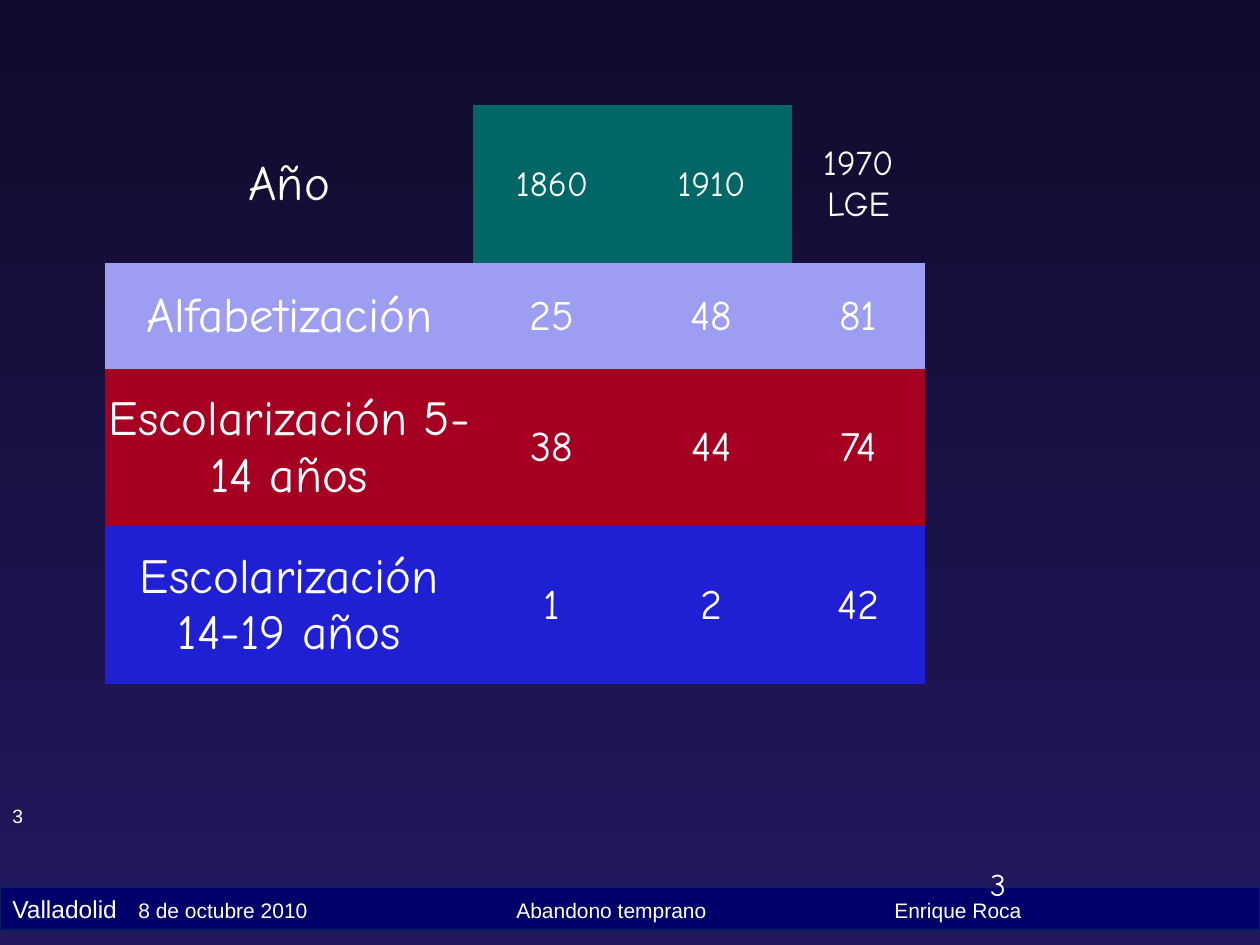
from lxml import etree
from pptx import Presentation
from pptx.dml.color import RGBColor
from pptx.enum.shapes import MSO_SHAPE
from pptx.enum.text import MSO_ANCHOR, PP_ALIGN
from pptx.oxml.ns import qn
from pptx.util import Cm, Pt

RECT = MSO_SHAPE.RECTANGLE
MIDDLE = MSO_ANCHOR.MIDDLE
LEFT, CENTER = PP_ALIGN.LEFT, PP_ALIGN.CENTER

WHITE = RGBColor(0xFF, 0xFF, 0xFF)
NIGHT = RGBColor(0x10, 0x0B, 0x2C)
VIOLET = RGBColor(0x22, 0x18, 0x5E)
NAVY = RGBColor(0x00, 0x00, 0x6B)
EDGE = RGBColor(0x00, 0x20, 0x60)
TEAL = RGBColor(0x00, 0x66, 0x66)
LILAC = RGBColor(0x9D, 0x9D, 0xF1)
RED = RGBColor(0xA5, 0x00, 0x21)
BLUE = RGBColor(0x1F, 0x1F, 0xD3)

SANS, COMIC = "Arial", "Comic Neue"
PLAIN = "{2D5ABB26-0587-4C30-8999-92F81FD0307C}"
COLS = (7.42, 3.18, 3.25, 2.67)
ROWS = (
    (3.18, 20, (None, TEAL, TEAL, None), ("Año", "1860", "1910", "1970\nLGE")),
    (2.14, 24, (LILAC,) * 4, ("Alfabetización", "25", "48", "81")),
    (3.16, 24, (RED,) * 4, ("Escolarización 5-14 años", "38", "44", "74")),
    (3.18, 24, (BLUE,) * 4, ("Escolarización\n14-19 años", "1", "2", "42")),
)


def style(run, size, face):
    """Give a run its size, typeface and white colour."""
    run.font.size = Pt(size)
    run.font.name = face
    run.font.color.rgb = WHITE


def paint(slide):
    """Fill the background with a vertical gradient."""
    fill = slide.background.fill
    fill.gradient()
    fill.gradient_angle = 270
    for stop, color in zip(fill.gradient_stops, (NIGHT, VIOLET)):
        stop.color.rgb = color


def add_number(slide, box, size, face):
    """Place the page number in a text box."""
    frame = slide.shapes.add_textbox(*map(Cm, box)).text_frame
    frame.word_wrap = True
    frame.text = "3"
    style(frame.paragraphs[0].runs[0], size, face)


def add_footer(slide, box):
    """Draw the footer band with its four tabbed entries."""
    band = slide.shapes.add_shape(RECT, *map(Cm, box))
    band.shadow.inherit = False
    band.fill.solid()
    band.fill.fore_color.rgb = NAVY
    band.line.color.rgb = EDGE
    band.line.width = Pt(0.75)
    band.text_frame.vertical_anchor = MIDDLE
    para = band.text_frame.paragraphs[0]
    para.alignment = LEFT
    tabs = etree.SubElement(para._p.get_or_add_pPr(), qn("a:tabLst"))
    for pos in (2.54, 10.16, 17.78):
        etree.SubElement(tabs, qn("a:tab"), pos=str(Cm(pos)), algn="l")
    parts = (
        ("Valladolid\t", 14),
        ("8 de octubre 2010\tAbandono temprano\tEnrique Roca", 12),
    )
    for text, size in parts:
        run = para.add_run()
        run.text = text
        style(run, size, SANS)


def fill_cell(cell, text, size, color):
    """Write one table cell and colour it."""
    cell.margin_left = cell.margin_right = cell.margin_top = Cm(0.03)
    cell.margin_bottom = 0
    cell.vertical_anchor = MIDDLE
    if color is None:
        cell.fill.background()
    else:
        cell.fill.solid()
        cell.fill.fore_color.rgb = color
    cell.text_frame.text = text
    for para in cell.text_frame.paragraphs:
        para.alignment = CENTER
        style(para.runs[0], size, COMIC)


def add_grid(slide, left, top):
    """Build the schooling table from its top left corner."""
    width, height = sum(COLS), sum(row[0] for row in ROWS)
    box = map(Cm, (left, top, width, height))
    table = slide.shapes.add_table(len(ROWS), len(COLS), *box).table
    table.first_row = table.horz_banding = False
    table._tbl.tblPr.find(qn("a:tableStyleId")).text = PLAIN
    for col, wide in zip(table.columns, COLS):
        col.width = Cm(wide)
    for row, (high, size, colors, texts) in zip(table.rows, ROWS):
        row.height = Cm(high)
        sizes = (28, size, size, size)
        for cell, text, points, color in zip(row.cells, texts, sizes, colors):
            fill_cell(cell, text, points, color)


def main():
    """Build and save the slide."""
    deck = Presentation()
    deck.slide_width, deck.slide_height = Cm(25.4), Cm(19.05)
    slide = deck.slides.add_slide(deck.slide_layouts[6])
    paint(slide)
    add_number(slide, (0, 16.08, 1.19, 0.74), 11, SANS)
    add_footer(slide, (0, 17.89, 25.4, 0.86))
    add_number(slide, (19.71, 17.32, 5.28, 1.27), 18, COMIC)
    add_grid(slide, 2.12, 2.12)
    deck.save("out.pptx")


if __name__ == "__main__":
    main()
